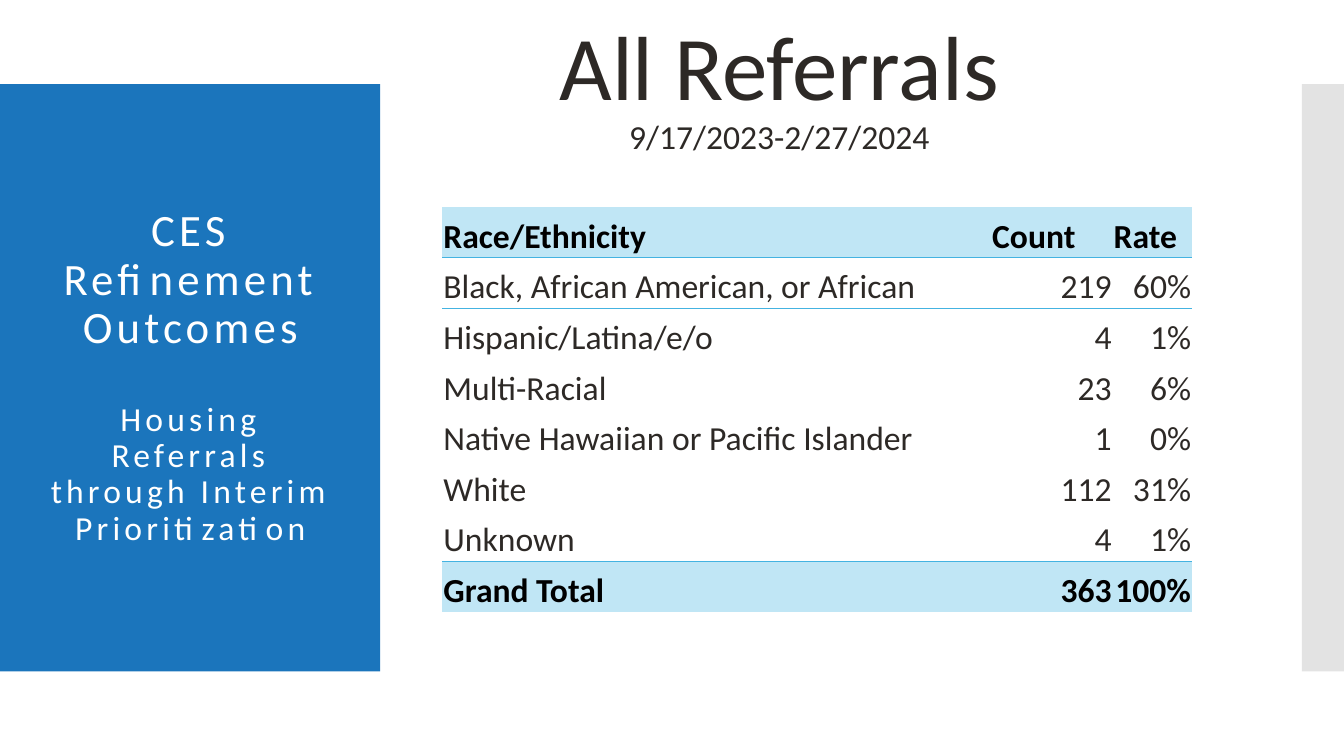
from dataclasses import dataclass

from lxml.etree import SubElement
from pptx import Presentation
from pptx.dml.color import RGBColor
from pptx.enum.shapes import MSO_SHAPE
from pptx.enum.text import MSO_ANCHOR, MSO_AUTO_SIZE, PP_ALIGN
from pptx.oxml import parse_xml
from pptx.oxml.ns import nsdecls, qn
from pptx.util import Pt


@dataclass(frozen=True)
class Theme:
    font: str = "Calibri"
    blue: str = "1B75BC"
    grey: str = "C8C8C8"
    white: str = "FFFFFF"
    black: str = "000000"
    ink: str = "2D2926"
    band: str = "C0E6F5"
    rule: str = "44B3E1"
    head: int = 65
    title: int = 32
    body: int = 24


THEME = Theme()
NO_STYLE = "{2D5ABB26-0587-4C30-8999-92F81FD0307C}"
ROWS = [
    ("Race/Ethnicity", "Count", "Rate"),
    ("Black, African American, or African", "219", "60%"),
    ("Hispanic/Latina/e/o", "4", "1%"),
    ("Multi-Racial", "23", "6%"),
    ("Native Hawaiian or Pacific Islander", "1", "0%"),
    ("White", "112", "31%"),
    ("Unknown", "4", "1%"),
    ("Grand Total", "363", "100%"),
]


def style(para, size, color, align=PP_ALIGN.CENTER, bold=False):
    para.alignment = align
    font = para.font
    font.name, font.size, font.bold = THEME.font, Pt(size), bold
    font.color.rgb = RGBColor.from_string(color)


def write(frame, lines, color):
    """Fill a frame with centred paragraphs given as (text, size) pairs."""
    frame.word_wrap = True
    frame.auto_size = MSO_AUTO_SIZE.NONE
    frame.vertical_anchor = MSO_ANCHOR.MIDDLE
    frame.text = "\n".join(text for text, size in lines)
    for para, (text, size) in zip(frame.paragraphs, lines):
        style(para, size, color)
        para.line_spacing = 0.9
        para.space_before = para.space_after = Pt(0)


def add_panel(slide, box, color, alpha=100):
    """Add a plain rectangle behind everything else."""
    panel = slide.shapes.add_shape(MSO_SHAPE.RECTANGLE, *map(Pt, box))
    panel.shadow.inherit = False
    panel.line.fill.background()
    panel.fill.solid()
    panel.fill.fore_color.rgb = RGBColor.from_string(color)
    if alpha < 100:
        tint = panel._element.spPr.find(".//" + qn("a:srgbClr"))
        SubElement(tint, qn("a:alpha"), val=str(alpha * 1000))
    slide.shapes._spTree.insert(2, panel._element)


def add_side(slide, box):
    """Place the blue panel with the slide title inside it."""
    left, top, width, height = box
    add_panel(slide, box, THEME.blue)
    title = slide.shapes.title
    title.left, title.top = Pt(left + 20), Pt(top + 29)
    title.width, title.height = Pt(width - 39.5), Pt(height - 58)
    frame = title.text_frame
    write(frame, [
        ("CES Refinement Outcomes", THEME.title),
        ("Housing Referrals through Interim Prioritization", THEME.body),
    ], THEME.white)
    frame.paragraphs[1].space_before = Pt(35)
    for para in frame.paragraphs:
        for run in para.runs:
            run._r.get_or_add_rPr().set("spc", "300")


def add_head(slide, box):
    frame = slide.shapes.add_textbox(*map(Pt, box)).text_frame
    write(frame, [
        ("All Referrals", THEME.head),
        ("9/17/2023-2/27/2024", THEME.body),
    ], THEME.ink)


def add_rule(cell, side):
    """Draw a thin line on one side of a cell: T or B."""
    line = parse_xml(
        f'<a:ln{side} {nsdecls("a")} w="6350"><a:solidFill>'
        f'<a:srgbClr val="{THEME.rule}"/></a:solidFill></a:ln{side}>')
    cell._tc.get_or_add_tcPr().insert(0, line)


def add_counts(slide, box):
    """Place the referral table, with bands on its first and last rows."""
    last = len(ROWS) - 1
    shape = slide.shapes.add_table(len(ROWS), 3, *map(Pt, box))
    table = shape.table
    table.first_row = table.horz_banding = False
    table._tbl.tblPr.find(qn("a:tableStyleId")).text = NO_STYLE
    for col, share in zip(table.columns, (0.732, 0.162, 0.106)):
        col.width = Pt(round(box[2] * share, 2))
    rules = {0: "B", 1: "T", last - 1: "B", last: "T"}
    for i, row in enumerate(ROWS):
        table.rows[i].height = Pt(box[3] / len(ROWS))
        band = i in (0, last)
        for j, text in enumerate(row):
            cell = table.cell(i, j)
            cell.text = text
            cell.vertical_anchor = MSO_ANCHOR.BOTTOM
            cell.margin_left = cell.margin_right = cell.margin_top = Pt(0.75)
            cell.margin_bottom = Pt(0)
            align = PP_ALIGN.RIGHT if i and j else PP_ALIGN.LEFT
            style(cell.text_frame.paragraphs[0], THEME.body,
                  THEME.black if band else THEME.ink, align, band)
            if band:
                cell.fill.solid()
                cell.fill.fore_color.rgb = RGBColor.from_string(THEME.band)
            else:
                cell.fill.background()
            if i in rules:
                add_rule(cell, rules[i])


def main():
    deck = Presentation()
    deck.slide_width, deck.slide_height = Pt(960), Pt(540)
    slide = deck.slides.add_slide(deck.slide_layouts[5])
    add_panel(slide, (930, 60, 30, 419.5), THEME.grey, 50)
    add_side(slide, (0, 60, 271.5, 419.5))
    add_head(slide, (347.5, 0, 418.5, 127.5))
    add_counts(slide, (316, 147.75, 535.5, 289.2))
    deck.save("out.pptx")


if __name__ == "__main__":
    main()
